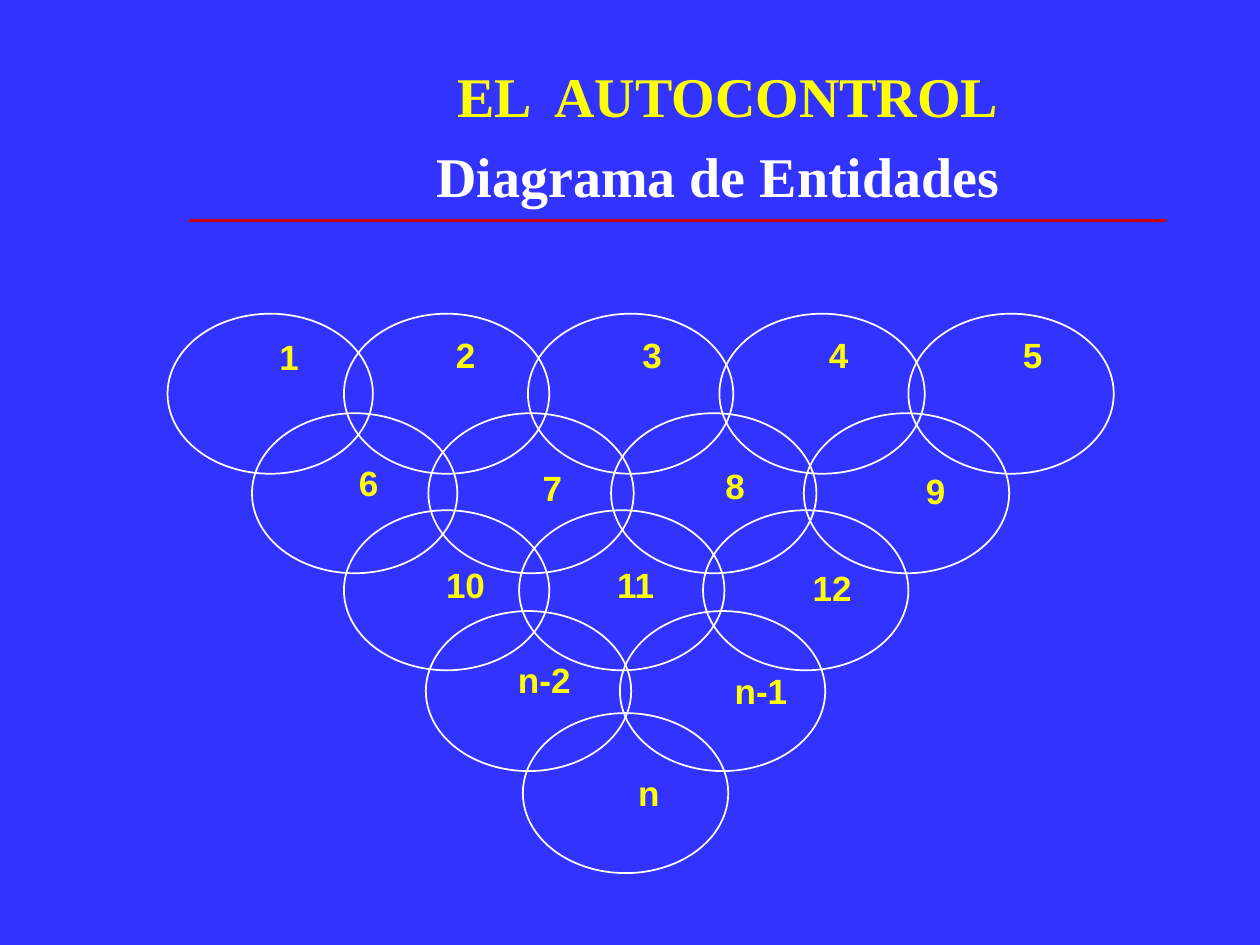
from typing import NamedTuple

from lxml.etree import SubElement
from pptx import Presentation
from pptx.dml.color import RGBColor
from pptx.enum.shapes import MSO_CONNECTOR, MSO_SHAPE
from pptx.enum.text import MSO_ANCHOR, PP_ALIGN
from pptx.oxml.ns import qn
from pptx.util import Inches, Pt

BLUE = RGBColor(0x33, 0x33, 0xFF)
RED = RGBColor(0xCC, 0x00, 0x00)
YELLOW = RGBColor(0xFF, 0xFF, 0x00)
WHITE = RGBColor(0xFF, 0xFF, 0xFF)

# The slide is a grid of 100 columns by 75 rows
WIDTH, HEIGHT = Inches(10), Inches(7.5)
COLUMN, ROW = WIDTH / 100, HEIGHT / 75
OVAL_COLUMNS, OVAL_ROWS = 16.3, 12.7
LABEL_COLUMNS, LABEL_ROWS = 7, 4.2


class Area(NamedTuple):
    left: float
    top: float
    columns: float
    rows: float

    def lengths(self) -> tuple[int, int, int, int]:
        return (round(self.left * COLUMN), round(self.top * ROW),
                round(self.columns * COLUMN), round(self.rows * ROW))


class Entity(NamedTuple):
    label: str
    left: float
    label_center: float
    label_middle: float


# Each tier: top row of its ovals, and its entities from left to right
TIERS = [
    (24.9, [Entity("1", 13.3, 22.95, 28.3), Entity("2", 27.3, 36.95, 28.1),
            Entity("3", 41.9, 51.75, 28.1), Entity("4", 57.1, 66.55, 28.1),
            Entity("5", 72.1, 81.95, 28.1)]),
    (32.8, [Entity("6", 20, 29.25, 38.3), Entity("7", 34, 43.85, 38.7),
            Entity("8", 48.5, 58.35, 38.5), Entity("9", 63.8, 74.25, 38.9)]),
    (40.5, [Entity("10", 27.3, 36.95, 46.4), Entity("11", 41.2, 50.45, 46.4),
            Entity("12", 55.8, 66.05, 46.6)]),
    (48.5, [Entity("n-2", 33.8, 43.2, 53.9), Entity("n-1", 49.2, 60.4, 54.8)]),
    (56.6, [Entity("n", 41.5, 51.5, 62.9)]),
]


def add_text(page, area: Area, text: str, font_name: str, size: int,
             color: RGBColor, anchor=MSO_ANCHOR.TOP, wrap=False) -> None:
    box = page.shapes.add_textbox(*area.lengths())
    frame = box.text_frame
    frame.word_wrap = wrap
    frame.vertical_anchor = anchor
    paragraph = frame.paragraphs[0]
    paragraph.text = text
    paragraph.alignment = PP_ALIGN.CENTER
    font = paragraph.font
    font.name, font.size, font.bold = font_name, Pt(size), True
    font.color.rgb = color


def add_rule(page, left: float, right: float, row: float) -> None:
    rule = page.shapes.add_connector(
        MSO_CONNECTOR.STRAIGHT, round(left * COLUMN), round(row * ROW),
        round(right * COLUMN), round(row * ROW))
    rule.line.color.rgb = RED
    rule.line.width = Pt(2.25)
    SubElement(rule._element.spPr, qn("a:effectLst"))


def add_oval(page, entity: Entity, top: float) -> None:
    area = Area(entity.left, top, OVAL_COLUMNS, OVAL_ROWS)
    oval = page.shapes.add_shape(MSO_SHAPE.OVAL, *area.lengths())
    oval.shadow.inherit = False
    oval.fill.background()
    oval.line.color.rgb = WHITE
    oval.line.width = Pt(1)


def add_label(page, entity: Entity) -> None:
    area = Area(entity.label_center - LABEL_COLUMNS / 2,
                entity.label_middle - LABEL_ROWS / 2, LABEL_COLUMNS, LABEL_ROWS)
    add_text(page, area, entity.label, "Arial", 20, YELLOW, MSO_ANCHOR.MIDDLE)


def main() -> None:
    deck = Presentation()
    deck.slide_width, deck.slide_height = WIDTH, HEIGHT
    page = deck.slides.add_slide(deck.slide_layouts[6])
    page.background.fill.solid()
    page.background.fill.fore_color.rgb = BLUE

    # Heading
    add_rule(page, 15, 92.5, 17.5)
    add_text(page, Area(12, 4.4, 91.6, 6.4), "EL  AUTOCONTROL",
             "Times New Roman", 32, YELLOW, wrap=True)
    add_text(page, Area(31.2, 10.75, 51.6, 6.4), "Diagrama de Entidades",
             "Times New Roman", 32, WHITE)

    # Inverted pyramid of overlapping entities
    for top, entities in TIERS:
        for entity in entities:
            add_oval(page, entity, top)
            add_label(page, entity)

    deck.save("out.pptx")


if __name__ == "__main__":
    main()
